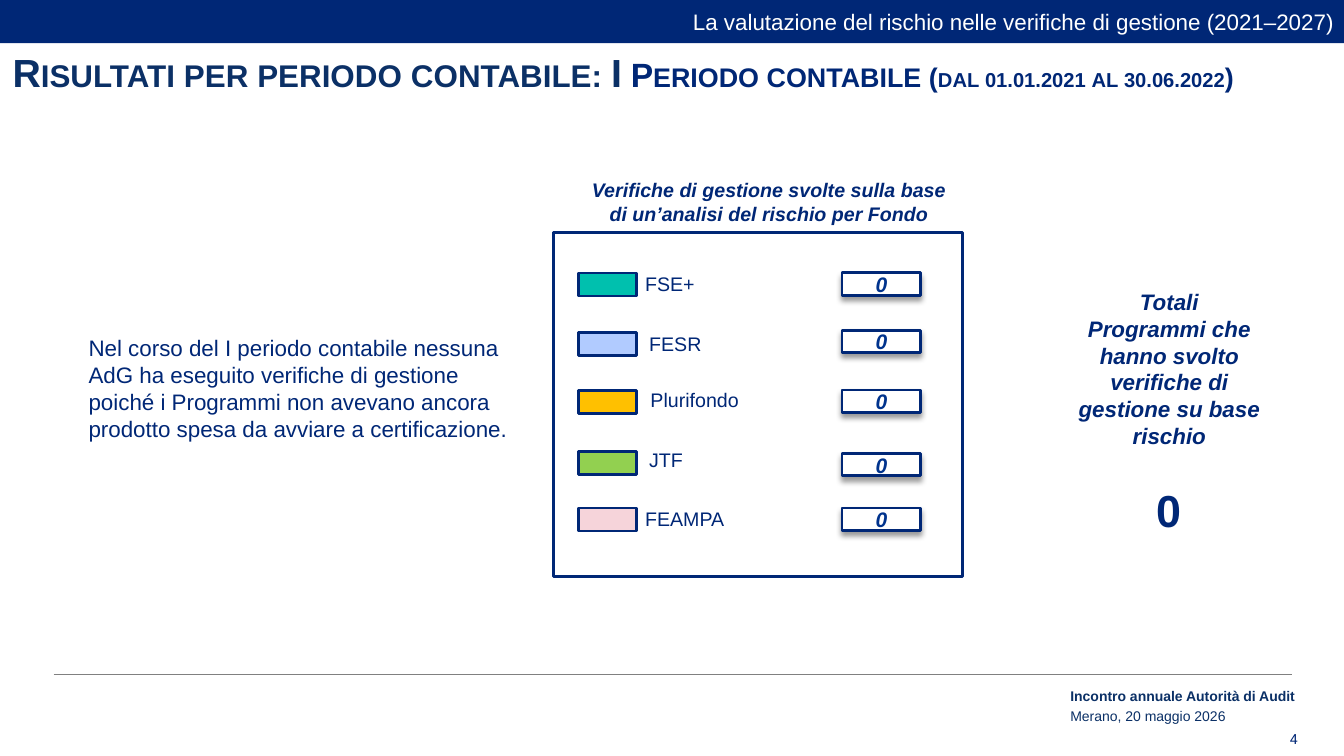
from dataclasses import dataclass

from lxml import etree
from pptx import Presentation
from pptx.dml.color import RGBColor
from pptx.enum.shapes import MSO_CONNECTOR, MSO_SHAPE
from pptx.enum.text import MSO_ANCHOR, PP_ALIGN
from pptx.oxml.ns import qn
from pptx.util import Inches, Pt

RECT = MSO_SHAPE.RECTANGLE
STRAIGHT = MSO_CONNECTOR.STRAIGHT
TOP, MIDDLE = MSO_ANCHOR.TOP, MSO_ANCHOR.MIDDLE
LEFT, CENTER, RIGHT = PP_ALIGN.LEFT, PP_ALIGN.CENTER, PP_ALIGN.RIGHT


@dataclass(frozen=True)
class Theme:
    font: str = "Arial"
    number_font: str = "Roboto"
    navy: str = "002776"
    ink: str = "0B3066"
    value: str = "00338D"
    white: str = "FFFFFF"
    rule: str = "808080"
    shadow: str = "000000"
    title: int = 28
    subtitle: int = 24
    dates: int = 18
    body: int = 16
    count: int = 15
    label: int = 14
    small: int = 10
    total: int = 32
    inset: float = 0.06


class SlideBuilder:
    """Draws styled elements on one slide, with lengths in percent of its size."""

    def __init__(self, prs, theme):
        self.theme = theme
        self.width, self.height = prs.slide_width, prs.slide_height
        self.s = prs.slides.add_slide(prs.slide_layouts[6])

    def box(self, x, y, w, h):
        return (int(x * self.width / 100), int(y * self.height / 100),
                int(w * self.width / 100), int(h * self.height / 100))

    def style(self, font, size, color, bold=False, italic=False, name=None):
        font.name = name or self.theme.font
        font.size = Pt(size)
        font.color.rgb = RGBColor.from_string(color)
        font.bold, font.italic = bold, italic

    def frame(self, sp, anchor, tight):
        tf = sp.text_frame
        tf.word_wrap = True
        tf.vertical_anchor = anchor
        if tight:
            tf.margin_left = tf.margin_right = Inches(self.theme.inset)
            tf.margin_top = tf.margin_bottom = Inches(self.theme.inset)
        return tf

    def paragraph(self, p, text, size, color, align=LEFT, **font):
        p.text = text
        p.alignment = align
        self.style(p.font, size, color, **font)

    def text(self, area, text, size, color, align=LEFT, anchor=TOP, tight=False, **font):
        sp = self.s.shapes.add_textbox(*self.box(*area))
        tf = self.frame(sp, anchor, tight)
        self.paragraph(tf.paragraphs[0], text, size, color, align, **font)
        return tf

    def small_caps(self, area, runs):
        sp = self.s.shapes.add_textbox(*self.box(*area))
        p = self.frame(sp, TOP, False).paragraphs[0]
        p.font.name, p.font.bold = self.theme.font, True
        for text, size, color in runs:
            r = p.add_run()
            r.text = text
            r.font.size = Pt(size)
            r.font.color.rgb = RGBColor.from_string(color)
            r.font._element.set("cap", "small")

    def rect(self, area, fill=None, line=None):
        sp = self.s.shapes.add_shape(RECT, *self.box(*area))
        sp.shadow.inherit = False
        if fill:
            sp.fill.solid()
            sp.fill.fore_color.rgb = RGBColor.from_string(fill)
        else:
            sp.fill.background()
        if line:
            sp.line.color.rgb = RGBColor.from_string(line)
            sp.line.width = Pt(2)
        else:
            sp.line.fill.background()
        return sp

    def banner(self, area, text):
        t = self.theme
        tf = self.frame(self.rect(area, t.navy), MIDDLE, False)
        self.paragraph(tf.paragraphs[0], text, t.body, t.white, RIGHT)

    def counter(self, area, text):
        t = self.theme
        sp = self.rect(area, t.white, t.navy)
        effects = sp._element.spPr.find(qn("a:effectLst"))
        shadow = etree.SubElement(effects, qn("a:outerShdw"), blurRad=str(Pt(4)),
                                  dist=str(Pt(3)), dir="5400000", rotWithShape="0")
        color = etree.SubElement(shadow, qn("a:srgbClr"), val=t.shadow)
        etree.SubElement(color, qn("a:alpha"), val="40000")
        tf = self.frame(sp, MIDDLE, True)
        self.paragraph(tf.paragraphs[0], text, t.count, t.value, CENTER, bold=True, italic=True)

    def rule(self, x1, x2, y):
        left, top, width, _ = self.box(x1, y, x2 - x1, 0)
        line = self.s.shapes.add_connector(STRAIGHT, left, top, left + width, top)
        line.line.color.rgb = RGBColor.from_string(self.theme.rule)
        line.line.width = Pt(0.75)
        etree.SubElement(line._element.spPr, qn("a:effectLst"))

    def footer(self, area, heading, detail):
        t = self.theme
        tf = self.text(area, heading, t.small, t.ink, bold=True)
        p = tf.add_paragraph()
        self.paragraph(p, detail, t.small, t.ink)
        p.space_before = Pt(2)


FUNDS = [
    ("FSE+", "00C0AE", 36.1, 36.1, (47.55, 35.3, 5.5, 4.5)),
    ("FESR", "B1CBFF", 44, 43.7, (47.85, 43.2, 5.5, 4.5)),
    ("Plurifondo", "FFC000", 51.7, 51.6, (47.95, 51.1, 10, 3.5)),
    ("JTF", "92D050", 59.7, 60, (47.85, 58.5, 7.7, 4.5)),
    ("FEAMPA", "F6D4DA", 67.2, 67.2, (47.55, 66.4, 8.5, 4.5)),
]


def main():
    prs = Presentation()
    prs.slide_width, prs.slide_height = Inches(13.33), Inches(7.5)
    t = Theme()
    b = SlideBuilder(prs, t)

    b.rule(4, 96.1, 89.2)
    b.text((66.2, 96.4, 31.1, 2.7), "4", t.small, t.navy, RIGHT, MIDDLE, name=t.number_font)
    b.small_caps((0.2, 5.7, 100, 15.7), [
        ("Risultati per periodo contabile: I ", t.title, t.ink),
        ("Periodo contabile (", t.subtitle, t.navy),
        ("dal 01.01.2021 al 30.06.2022", t.dates, t.navy),
        (")", t.subtitle, t.navy),
    ])
    b.banner((0, 0, 100, 5.7),
             "La valutazione del rischio nelle verifiche di gestione (2021–2027)")
    b.footer((78.9, 90.3, 27.8, 5.7),
             "Incontro annuale Autorità di Audit", "Merano, 20 maggio 2026")

    b.rect((41.2, 30.8, 30.4, 45.5), line=t.navy)
    for name, color, swatch_top, count_top, label_area in FUNDS:
        b.text(label_area, name, t.label, t.navy, anchor=MIDDLE, tight=True)
        b.rect((43.05, swatch_top, 4.3, 3.05), color, t.navy)
        b.counter((62.65, count_top, 5.85, 2.95), "0")

    b.text((5.85, 43.6, 33, 15.7),
           "Nel corso del I periodo contabile nessuna AdG ha eseguito verifiche di gestione "
           "poiché i Programmi non avevano ancora prodotto spesa da avviare a certificazione.",
           t.body, t.navy)
    b.text((42.9, 24.1, 28.65, 5.2),
           "Verifiche di gestione svolte sulla base di un’analisi del rischio per Fondo",
           t.label, t.navy, CENTER, MIDDLE, True, bold=True, italic=True)
    b.text((79.75, 37.3, 14.5, 3.6),
           "Totali Programmi che hanno svolto verifiche di gestione su base rischio",
           t.body, t.navy, CENTER, TOP, True, bold=True, italic=True)
    b.text((82.5, 61.5, 8.9, 11.7), "0", t.total, t.navy, CENTER, MIDDLE, True, bold=True)

    prs.save("out.pptx")


if __name__ == "__main__":
    main()
